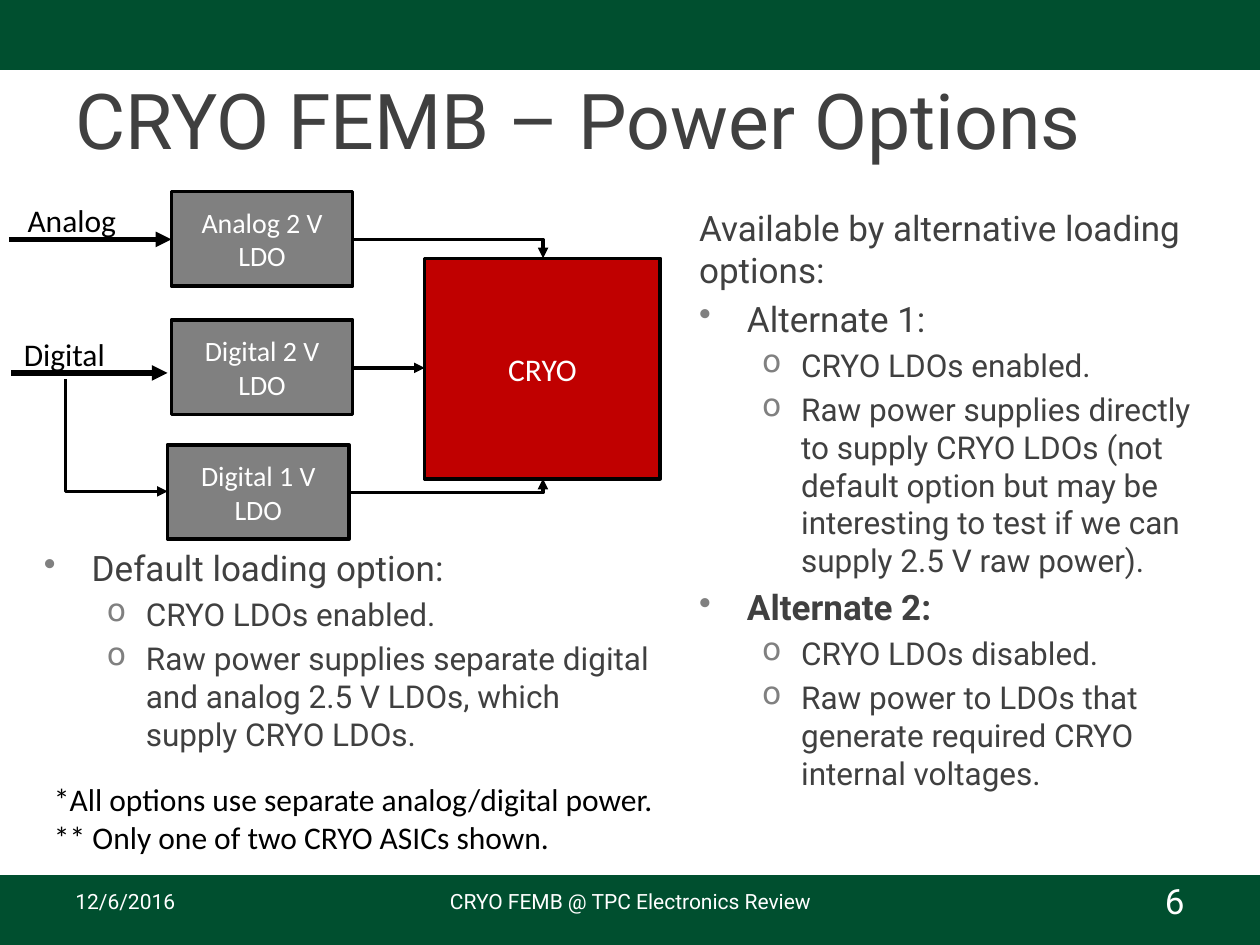
from dataclasses import dataclass

import pptx
import pptx.dml.color
import pptx.enum.shapes
import pptx.enum.text
import pptx.oxml.ns
import pptx.util
from lxml import etree

Inches = pptx.util.Inches
Pt = pptx.util.Pt
RGBColor = pptx.dml.color.RGBColor
Align = pptx.enum.text.PP_ALIGN
Anchor = pptx.enum.text.MSO_ANCHOR
Wire = pptx.enum.shapes.MSO_CONNECTOR
qn = pptx.oxml.ns.qn

GREEN = RGBColor(0x00, 0x4F, 0x2F)
RED = RGBColor(0xC0, 0x00, 0x00)
GRAY = RGBColor(0x80, 0x80, 0x80)
DARK = RGBColor(0x40, 0x40, 0x40)
BLACK = RGBColor(0x00, 0x00, 0x00)
WHITE = RGBColor(0xFF, 0xFF, 0xFF)

BODY = {"name": "Roboto", "color": DARK}
FOOT = {"name": "Roboto", "color": WHITE, "size": Pt(12)}
NOTE = {"name": "Calibri", "color": BLACK, "size": Pt(18)}


@dataclass
class Block:
    at: tuple
    text: str
    fill: RGBColor
    edge: RGBColor = BLACK
    size: int = 16


@dataclass
class Label:
    at: tuple
    text: str
    form: dict
    align: Align = Align.LEFT
    anchor: Anchor = Anchor.TOP
    wrap: bool = True


@dataclass
class Arrow:
    """Ends are given before the turn is applied."""
    ends: tuple
    width: int = 2
    shape: str = "line"
    turn: int = 0


@dataclass
class Item:
    text: str
    level: int = 1
    bold: bool = False


@dataclass
class Style:
    size: int
    left: float = 0
    hang: float = 0
    mark: str = ""


LEVELS = [Style(20), Style(20, 0.38, 0.38, "•"), Style(18, 0.81, 0.31, "o")]

BLOCKS = [
    Block((0, 6.96, 10, 0.54), "", GREEN, GREEN),
    Block((0, 0, 10, 0.54), "", GREEN, GREEN),
    Block((3.37, 2.05, 1.87, 1.75), "CRYO", RED, size=18),
    Block((1.36, 1.52, 1.44, 0.75), "Analog 2 V LDO", GRAY),
    Block((1.36, 2.54, 1.44, 0.75), "Digital 2 V LDO", GRAY),
    Block((1.33, 3.53, 1.44, 0.75), "Digital 1 V LDO", GRAY),
]

LABELS = [
    Label((0.5, 0.55, 9, 0.78), "CRYO FEMB – Power Options",
          BODY | {"size": Pt(44)}, anchor=Anchor.MIDDLE),
    Label((0.5, 6.95, 2.33, 0.4), "12/6/2016", FOOT, anchor=Anchor.MIDDLE),
    Label((3.42, 6.95, 3.17, 0.4), "CRYO FEMB @ TPC Electronics Review",
          FOOT, Align.CENTER, Anchor.MIDDLE),
    Label((7.17, 6.95, 2.33, 0.4), "6", FOOT | {"size": Pt(20)},
          Align.RIGHT, Anchor.MIDDLE),
    Label((0.12, 1.55, 0.91, 0.4), "Analog", NOTE, wrap=False),
    Label((0.09, 2.61, 0.85, 0.4), "Digital", NOTE, wrap=False),
    Label((0.33, 6.14, 5.01, 0.71),
          "*All options use separate analog/digital power.\n"
          "** Only one of two CRYO ASICs shown.", NOTE, wrap=False),
]

ARROWS = [
    Arrow((0.07, 1.9, 1.36, 1.9), 3),
    Arrow((0.09, 2.96, 1.33, 2.96), 3),
    Arrow((2.8, 1.9, 4.31, 2.05), shape="bentConnector2"),
    Arrow((2.78, 3.91, 4.31, 3.8), shape="bentConnector2"),
    Arrow((2.8, 2.92, 3.37, 2.92), shape="bentConnector3"),
    Arrow((1.37, 3.05, 0.48, 3.86), shape="bentConnector2", turn=270),
]

DEFAULT = [
    Item("Default loading option:"),
    Item("CRYO LDOs enabled.", 2),
    Item("Raw power supplies separate digital and analog 2.5 V LDOs, "
         "which supply CRYO LDOs.", 2),
]

OTHERS = [
    Item("Available by alternative loading options:", 0),
    Item("Alternate 1:"),
    Item("CRYO LDOs enabled.", 2),
    Item("Raw power supplies directly to supply CRYO LDOs (not default "
         "option but may be interesting to test if we can supply 2.5 V "
         "raw power).", 2),
    Item("Alternate 2:", bold=True),
    Item("CRYO LDOs disabled.", 2),
    Item("Raw power to LDOs that generate required CRYO internal "
         "voltages.", 2),
]


def spot(at: tuple) -> list:
    return [Inches(n) for n in at]


def write(para, text: str, form: dict) -> None:
    run = para.add_run()
    run.text = text
    for key, value in form.items():
        if key == "color":
            run.font.color.rgb = value
        else:
            setattr(run.font, key, value)


def draw_block(slide, block: Block) -> None:
    kind = pptx.enum.shapes.MSO_SHAPE.RECTANGLE
    shape = slide.shapes.add_shape(kind, *spot(block.at))
    shape.shadow.inherit = False
    shape.fill.solid()
    shape.fill.fore_color.rgb = block.fill
    shape.line.color.rgb = block.edge
    shape.line.width = Pt(2)
    if block.text:
        frame = shape.text_frame
        frame.vertical_anchor = Anchor.MIDDLE
        para = frame.paragraphs[0]
        para.alignment = Align.CENTER
        write(para, block.text, {"name": "Calibri", "color": WHITE,
                                 "size": Pt(block.size)})


def draw_label(slide, label: Label) -> None:
    frame = slide.shapes.add_textbox(*spot(label.at)).text_frame
    frame.word_wrap = label.wrap
    frame.vertical_anchor = label.anchor
    for i, text in enumerate(label.text.split("\n")):
        para = frame.add_paragraph() if i else frame.paragraphs[0]
        para.alignment = label.align
        write(para, text, label.form)


def draw_arrow(slide, arrow: Arrow) -> None:
    kind = Wire.STRAIGHT if arrow.shape == "line" else Wire.ELBOW
    wire = slide.shapes.add_connector(kind, *spot(arrow.ends))
    wire.line.color.rgb = BLACK
    wire.line.width = Pt(arrow.width)
    props = wire._element.spPr
    props.find(qn("a:prstGeom")).set("prst", arrow.shape)
    if arrow.turn:
        props.find(qn("a:xfrm")).set("rot", str(arrow.turn * 60000))
    tip = etree.SubElement(props.find(qn("a:ln")), qn("a:tailEnd"))
    tip.set("type", "triangle")
    etree.SubElement(props, qn("a:effectLst"))


def add_mark(para, style: Style) -> None:
    """Give the paragraph a gray bullet with a hanging indent."""
    props = para._p.get_or_add_pPr()
    props.set("marL", str(Inches(style.left)))
    props.set("indent", str(-Inches(style.hang)))
    tint = etree.SubElement(props, qn("a:buClr"))
    etree.SubElement(tint, qn("a:srgbClr")).set("val", str(GRAY))
    etree.SubElement(props, qn("a:buChar")).set("char", style.mark)


def draw_list(slide, at: tuple, items: list[Item]) -> None:
    frame = slide.shapes.add_textbox(*spot(at)).text_frame
    frame.word_wrap = True
    for i, item in enumerate(items):
        style = LEVELS[item.level]
        para = frame.add_paragraph() if i else frame.paragraphs[0]
        para.level = max(item.level - 1, 0)
        para.space_before = Pt(style.size * 0.2)
        if style.mark:
            add_mark(para, style)
        write(para, item.text,
              BODY | {"size": Pt(style.size), "bold": item.bold})


def main() -> None:
    deck = pptx.Presentation()
    deck.slide_width, deck.slide_height = Inches(10), Inches(7.5)
    slide = deck.slides.add_slide(deck.slide_layouts[6])
    for block in BLOCKS:
        draw_block(slide, block)
    for label in LABELS:
        draw_label(slide, label)
    for arrow in ARROWS:
        draw_arrow(slide, arrow)
    draw_list(slide, (0.25, 4.29, 5.04, 1.53), DEFAULT)
    draw_list(slide, (5.45, 1.59, 4.11, 3.74), OTHERS)
    deck.save("out.pptx")


if __name__ == "__main__":
    main()
